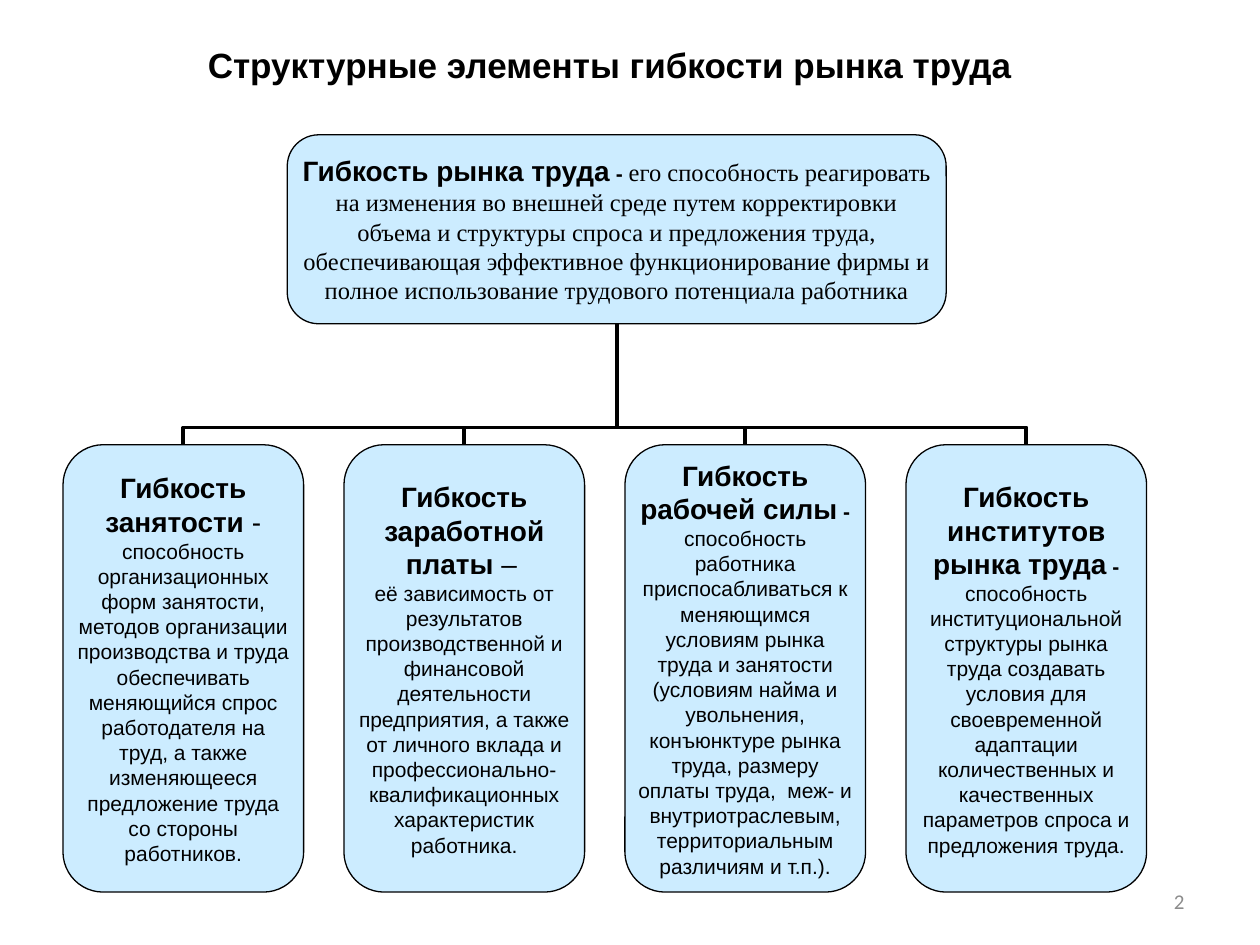
import pptx
import pptx.util
import pptx.dml.color
import pptx.enum.shapes
import pptx.enum.text
import lxml.etree

Inches = pptx.util.Inches
Pt = pptx.util.Pt
ALIGN = pptx.enum.text.PP_ALIGN
COLORS = {"text": "000000", "line": "000000", "box": "CCECFF", "number": "8C8C8C"}

# A run is (text, size, bold, font); a box is a list of paragraphs, each a list of runs.
TITLE = [[("Структурные элементы гибкости рынка труда", 20, True, "Arial")]]
PAGE_NUMBER = [[("2", 12, False, "Calibri")]]
MARKET = [[
    ("Гибкость рынка труда", 16, True, "Arial"),
    (" - ", 12, True, "Arial"),
    ("его способность реагировать на изменения во внешней среде путем корректировки "
     "объема и структуры спроса и предложения труда, обеспечивающая эффективное "
     "функционирование фирмы и полное использование трудового потенциала работника",
     14, False, "Times New Roman"),
]]
ELEMENTS = [
    [[("Гибкость занятости", 16, True, "Arial"),
      (" -", 16, False, "Arial"),
      (" способность организационных форм занятости, методов организации производства "
       "и труда обеспечивать меняющийся спрос работодателя на труд, а также "
       "изменяющееся предложение труда со стороны работников.", 12, False, "Arial")]],
    [[("Гибкость заработной платы", 16, True, "Arial"),
      (" –", 16, False, "Arial"),
      (" ", 12, False, "Arial")],
     [("её зависимость от результатов производственной и финансовой деятельности "
       "предприятия, а также от личного вклада и профессионально-квалификационных "
       "характеристик работника.", 12, False, "Arial")]],
    [[("Гибкость рабочей силы", 16, True, "Arial"),
      (" - ", 12, True, "Arial"),
      ("способность работника приспосабливаться к меняющимся условиям рынка труда и "
       "занятости (условиям найма и увольнения, конъюнктуре рынка труда, размеру оплаты "
       "труда,  меж- и внутриотраслевым, территориальным различиям и т.п.).",
       12, False, "Arial")]],
    [[("Гибкость институтов рынка труда", 16, True, "Arial"),
      (" - ", 12, True, "Arial"),
      ("способность институциональной структуры рынка труда создавать условия для "
       "своевременной адаптации количественных и качественных параметров спроса и "
       "предложения труда.", 12, False, "Arial")]],
]

MARKET_LEFT, MARKET_TOP, MARKET_WIDTH, MARKET_HEIGHT = 2.28, 1.07, 5.23, 1.5
ELEMENT_LEFT, ELEMENT_TOP, ELEMENT_WIDTH, ELEMENT_HEIGHT = 0.5, 3.53, 1.91, 3.55
ELEMENT_STEP = 2.23
BEND = 14300  # position of the bend, in 1/100000 of the connector's length


def rgb(name):
    return pptx.dml.color.RGBColor.from_string(COLORS[name])


def write(frame, paragraphs, align=ALIGN.CENTER, color="text"):
    frame.word_wrap = True
    frame.vertical_anchor = pptx.enum.text.MSO_ANCHOR.MIDDLE
    for index, runs in enumerate(paragraphs):
        paragraph = frame.add_paragraph() if index else frame.paragraphs[0]
        paragraph.alignment = align
        for text, size, bold, font in runs:
            run = paragraph.add_run()
            run.text = text
            run.font.size = Pt(size)
            run.font.bold = bold
            run.font.name = font
            run.font.color.rgb = rgb(color)


def add_label(slide, place, paragraphs, **style):
    label = slide.shapes.add_textbox(*map(Inches, place))
    write(label.text_frame, paragraphs, **style)


def add_box(slide, place, paragraphs):
    box = slide.shapes.add_shape(
        pptx.enum.shapes.MSO_SHAPE.ROUNDED_RECTANGLE, *map(Inches, place))
    box.shadow.inherit = False
    box.fill.solid()
    box.fill.fore_color.rgb = rgb("box")
    box.line.color.rgb = rgb("line")
    box.line.width = Pt(0.75)
    frame = box.text_frame
    frame.margin_left = frame.margin_right = frame.margin_top = frame.margin_bottom = 0
    write(frame, paragraphs)


def add_branch(slide, x, y, market_x, market_y):
    """Elbow from an element's top up to the market box, as a quarter-turned connector."""
    middle_x, middle_y = (x + market_x) / 2, (y + market_y) / 2
    half_length, half_span = (y - market_y) / 2, abs(x - market_x) / 2
    side = 1 if x > market_x else -1
    branch = slide.shapes.add_connector(
        pptx.enum.shapes.MSO_CONNECTOR.ELBOW,
        Inches(middle_x + side * half_length), Inches(middle_y - half_span),
        Inches(middle_x - side * half_length), Inches(middle_y + half_span))
    branch.line.color.rgb = rgb("line")
    branch.line.width = Pt(2.25)
    properties = branch._element.spPr
    properties.xfrm.set("rot", str((90 if side > 0 else 270) * 60000))
    qn = pptx.oxml.ns.qn
    adjustments = properties.find(qn("a:prstGeom")).find(qn("a:avLst"))
    lxml.etree.SubElement(adjustments, qn("a:gd"), name="adj1", fmla=f"val {BEND}")
    lxml.etree.SubElement(properties, qn("a:effectLst"))


def main():
    deck = pptx.Presentation()
    deck.slide_width, deck.slide_height = Inches(10), Inches(7.5)
    slide = deck.slides.add_slide(deck.slide_layouts[6])

    add_label(slide, (7.17, 6.95, 2.33, 0.4), PAGE_NUMBER,
              align=ALIGN.RIGHT, color="number")
    add_label(slide, (0.51, 0.21, 8.66, 0.61), TITLE)

    lefts = [ELEMENT_LEFT + i * ELEMENT_STEP for i in range(len(ELEMENTS))]
    for left in lefts:
        add_branch(slide, left + ELEMENT_WIDTH / 2, ELEMENT_TOP,
                   MARKET_LEFT + MARKET_WIDTH / 2, MARKET_TOP + MARKET_HEIGHT)
    add_box(slide, (MARKET_LEFT, MARKET_TOP, MARKET_WIDTH, MARKET_HEIGHT), MARKET)
    for left, element in zip(lefts, ELEMENTS):
        add_box(slide, (left, ELEMENT_TOP, ELEMENT_WIDTH, ELEMENT_HEIGHT), element)

    deck.save("out.pptx")


if __name__ == "__main__":
    main()
